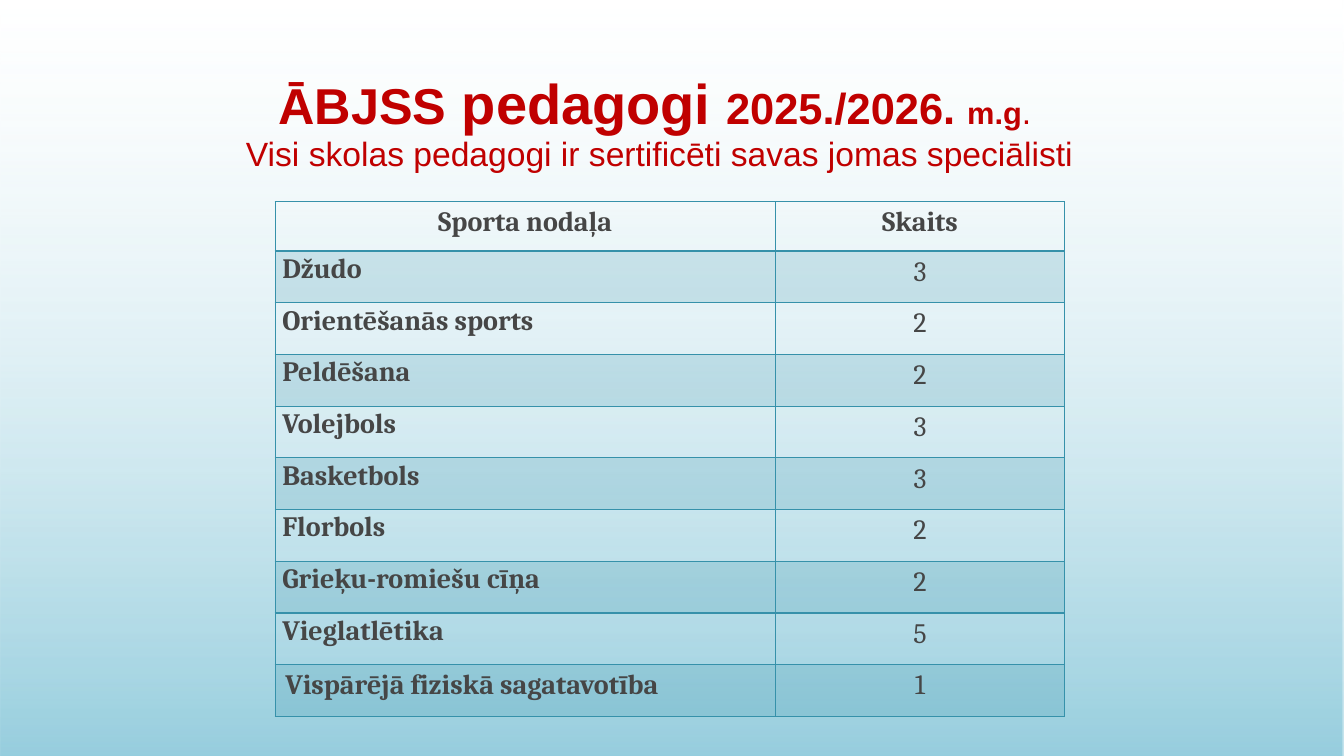
from dataclasses import dataclass

from lxml import etree
from pptx import Presentation
from pptx.dml.color import RGBColor
from pptx.enum.shapes import MSO_SHAPE
from pptx.enum.text import MSO_ANCHOR, MSO_AUTO_SIZE, PP_ALIGN
from pptx.oxml.ns import qn
from pptx.slide import Slide
from pptx.table import Table, _Cell
from pptx.util import Inches, Pt

RECTANGLE = MSO_SHAPE.RECTANGLE
BOTTOM = MSO_ANCHOR.BOTTOM
NO_AUTOFIT = MSO_AUTO_SIZE.NONE
CENTER = PP_ALIGN.CENTER
LEFT = PP_ALIGN.LEFT

COLORS = {
    "title": "C00000",
    "text": "464646",
    "teal": "3691AA",
    "gradient_bottom": "7DC2D6",
    "gradient_top": "D4EBF1",
}
TITLE_FONT = "Arial"
TABLE_FONT = "Cambria"
SLIDE_WIDTH = Inches(13.33)
SLIDE_HEIGHT = Inches(7.5)
HEADER_HEIGHT = Inches(0.49)
COLUMN_WIDTHS = (Inches(4.96), Inches(2.87))
BORDER_TAGS = ("a:lnL", "a:lnR", "a:lnT", "a:lnB")


@dataclass(frozen=True)
class Area:
    left: float
    top: float
    width: float
    height: float

    def lengths(self) -> tuple[int, int, int, int]:
        return (
            round(self.left * SLIDE_WIDTH),
            round(self.top * SLIDE_HEIGHT),
            round(self.width * SLIDE_WIDTH),
            round(self.height * SLIDE_HEIGHT),
        )


@dataclass(frozen=True)
class TitleRun:
    text: str
    size: int
    bold: bool = True


@dataclass(frozen=True)
class Department:
    name: str
    count: int
    compact: bool = True


TITLE_AREA = Area(1.41 / 13.33, 0.61 / 7.5, 10.26 / 13.33, 1.16 / 7.5)
TABLE_AREA = Area(2.73 / 13.33, 2 / 7.5, 7.83 / 13.33, 5.11 / 7.5)

TITLE_RUNS = (
    TitleRun("ĀBJSS", 36),
    TitleRun(" pedagogi ", 40),
    TitleRun("2025./2026. ", 31),
    TitleRun("m.g", 22),
    TitleRun(". ", 24, False),
)
SUBTITLE = TitleRun("Visi skolas pedagogi ir sertificēti savas jomas speciālisti", 24, False)

HEADERS = ("Sporta nodaļa", "Skaits")
DEPARTMENTS = (
    Department("Džudo", 3),
    Department("Orientēšanās sports", 2),
    Department("Peldēšana", 2),
    Department("Volejbols", 3),
    Department("Basketbols", 3),
    Department("Florbols", 2),
    Department("Grieķu-romiešu cīņa", 2),
    Department("Vieglatlētika", 5),
    Department("Vispārējā fiziskā sagatavotība", 1, False),
)


def color(name: str) -> RGBColor:
    return RGBColor.from_string(COLORS[name])


def set_alpha(color_element: etree._Element, percent: int) -> None:
    etree.SubElement(color_element, qn("a:alpha"), val=str(percent * 1000))


def add_backdrop(slide: Slide) -> None:
    shape = slide.shapes.add_shape(RECTANGLE, *Area(0, 0, 1, 1).lengths())
    shape.shadow.inherit = False
    shape.line.fill.background()
    shape.fill.gradient()
    shape.fill.gradient_angle = 90
    stops = (("gradient_bottom", 0, 80), ("gradient_top", 0.99, 0))
    for stop, (name, position, alpha) in zip(shape.fill.gradient_stops, stops):
        stop.color.rgb = color(name)
        stop.position = position
    for element, (_, _, alpha) in zip(shape._element.spPr.iter(qn("a:srgbClr")), stops):
        set_alpha(element, alpha)


def fill_title(slide: Slide) -> None:
    title = slide.shapes.title
    title.left, title.top, title.width, title.height = TITLE_AREA.lengths()
    frame = title.text_frame
    frame.auto_size = NO_AUTOFIT
    frame.word_wrap = True
    frame.vertical_anchor = BOTTOM
    paragraph = frame.paragraphs[0]
    paragraph.alignment = CENTER
    paragraph.line_spacing = 0.9
    paragraph.font.name = TITLE_FONT
    paragraph.font.color.rgb = color("title")
    for part in (*TITLE_RUNS, SUBTITLE):
        if part is SUBTITLE:
            paragraph.add_line_break()
        run = paragraph.add_run()
        run.text = part.text
        run.font.size = Pt(part.size)
        run.font.bold = part.bold


def set_borders(cell: _Cell, bottom_width: int) -> None:
    properties = cell._tc.get_or_add_tcPr()
    for index, tag in enumerate(BORDER_TAGS):
        width = bottom_width if tag == "a:lnB" else 1
        line = etree.Element(qn(tag), w=str(Pt(width)))
        fill = etree.SubElement(line, qn("a:solidFill"))
        etree.SubElement(fill, qn("a:srgbClr"), val=COLORS["teal"])
        properties.insert(index, line)


def fill_cell(cell: _Cell, text: str, bold: bool, alignment: PP_ALIGN,
              shaded: bool = False, bottom_width: int = 1) -> None:
    cell.text = text
    paragraph = cell.text_frame.paragraphs[0]
    paragraph.alignment = alignment
    paragraph.font.name = TABLE_FONT
    paragraph.font.size = Pt(20)
    paragraph.font.bold = bold
    paragraph.font.color.rgb = color("text")
    if shaded:
        cell.fill.solid()
        cell.fill.fore_color.rgb = color("teal")
        set_alpha(cell._tc.tcPr.find(".//" + qn("a:srgbClr")), 20)
    else:
        cell.fill.background()
    set_borders(cell, bottom_width)


def fill_department(table: Table, row: int, department: Department) -> None:
    shaded = row % 2 == 1
    name_cell, count_cell = table.cell(row, 0), table.cell(row, 1)
    fill_cell(name_cell, department.name, True, LEFT, shaded)
    fill_cell(count_cell, str(department.count), False, CENTER, shaded)
    if department.compact:
        name_cell.margin_left = name_cell.margin_right = Inches(0.07)
        name_cell.margin_top = name_cell.margin_bottom = 0
        name_cell.text_frame.paragraphs[0].line_spacing = 1.07


def add_department_table(slide: Slide) -> None:
    left, top, width, height = TABLE_AREA.lengths()
    table = slide.shapes.add_table(
        len(DEPARTMENTS) + 1, len(HEADERS), left, top, width, height
    ).table
    table.first_row = False
    table.horz_banding = False
    for column, column_width in zip(table.columns, COLUMN_WIDTHS):
        column.width = column_width
    for row in table.rows:
        row.height = (height - HEADER_HEIGHT) // len(DEPARTMENTS)
    table.rows[0].height = HEADER_HEIGHT
    for index, header in enumerate(HEADERS):
        fill_cell(table.cell(0, index), header, True, CENTER, bottom_width=2)
    for row_index, department in enumerate(DEPARTMENTS, start=1):
        fill_department(table, row_index, department)


def main() -> None:
    presentation = Presentation()
    presentation.slide_width = SLIDE_WIDTH
    presentation.slide_height = SLIDE_HEIGHT
    slide = presentation.slides.add_slide(presentation.slide_layouts[5])
    add_backdrop(slide)
    slide.shapes._spTree.insert(2, slide.shapes[-1]._element)
    fill_title(slide)
    add_department_table(slide)
    presentation.save("out.pptx")


if __name__ == "__main__":
    main()
